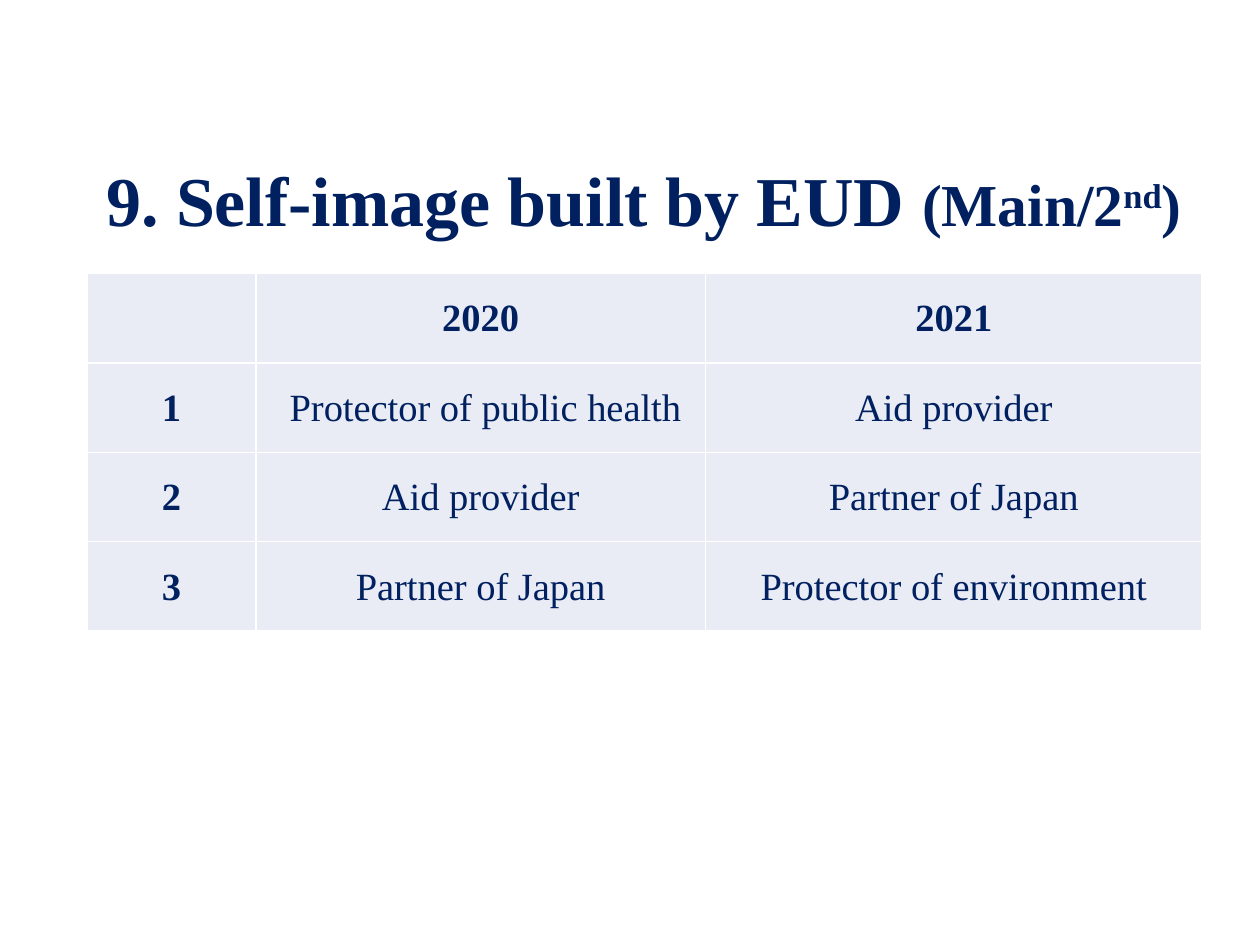
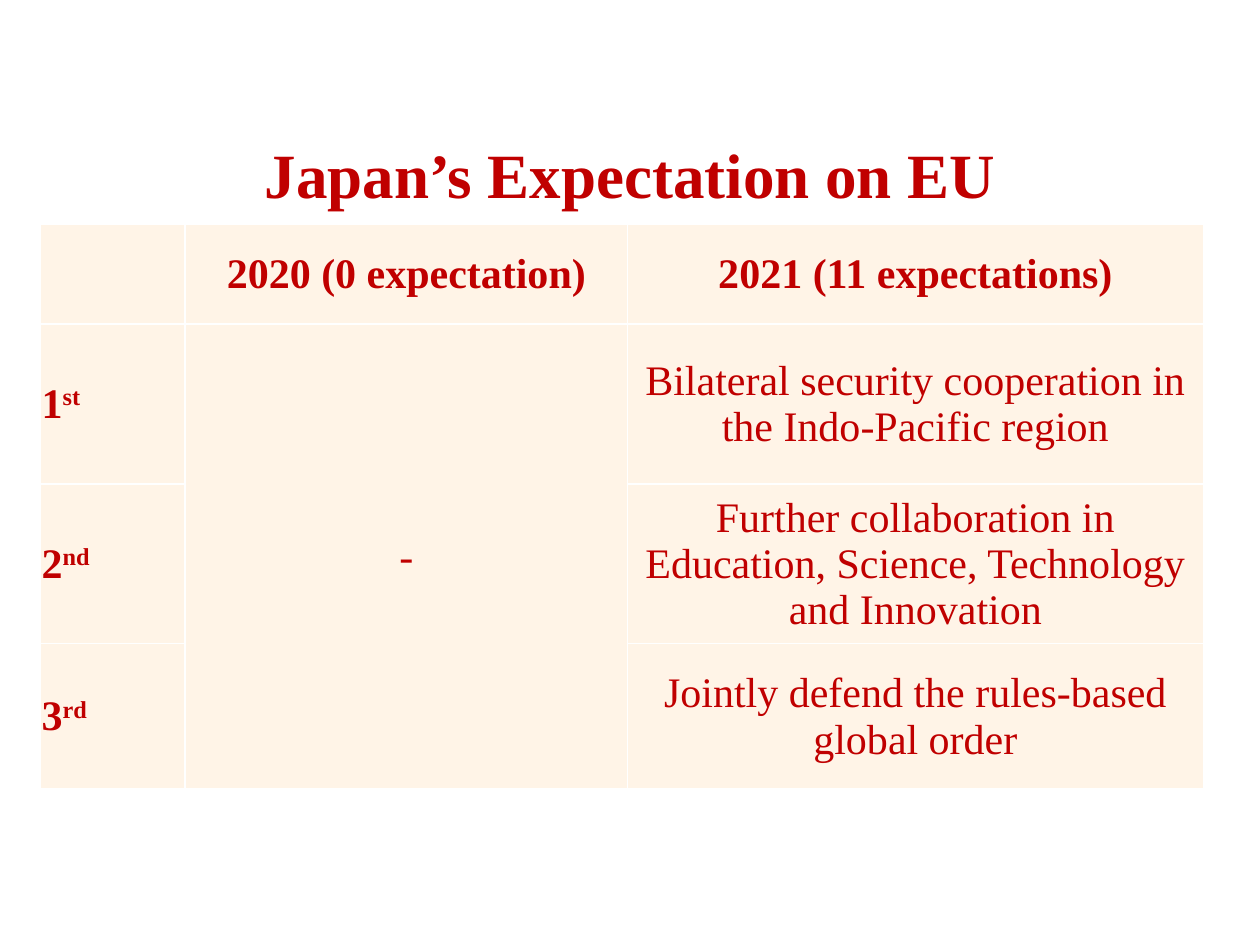
import lxml.etree
import pptx
import pptx.dml.color
import pptx.enum.text
import pptx.oxml.ns
import pptx.util

Inches = pptx.util.Inches
Pt = pptx.util.Pt
ALIGN = pptx.enum.text.PP_ALIGN
MIDDLE = pptx.enum.text.MSO_ANCHOR.MIDDLE
FONT = "Times New Roman"
NAVY, PALE_BLUE = "002060", "E9EBF5"
RED, CREAM = "C00000", "FFF4E7"
WHITE = "FFFFFF"


def rgb(value):
    """Turn a hex string into a colour."""
    return pptx.dml.color.RGBColor.from_string(value)


def add_run(p, text, size, color, bold=True, raised=False):
    """Add one formatted run, raised for an ordinal ending."""
    r = p.add_run()
    r.text = text
    r.font.name = FONT
    r.font.size = Pt(size)
    r.font.bold = bold
    r.font.color.rgb = rgb(color)
    if raised:
        r.font._element.set("baseline", "30000")


def add_title(slide, box, color, runs):
    """Place the title and fill it with (text, size, raised) runs."""
    sp = slide.shapes.title
    sp.left, sp.top, sp.width, sp.height = map(Inches, box)
    tf = sp.text_frame
    tf.word_wrap = True
    tf.auto_size = pptx.enum.text.MSO_AUTO_SIZE.NONE
    tf.vertical_anchor = MIDDLE
    p = tf.paragraphs[0]
    p.alignment = ALIGN.CENTER
    p.line_spacing = 0.9
    for text, size, raised in runs:
        add_run(p, text, size, color, raised=raised)


def style_cell(cell, fill):
    """Give a cell white borders, a fill and thin margins."""
    tc_pr = cell._tc.get_or_add_tcPr()
    for side in ("a:lnL", "a:lnR", "a:lnT", "a:lnB"):
        ln = lxml.etree.SubElement(tc_pr, pptx.oxml.ns.qn(side), w=str(Pt(1)))
        solid = lxml.etree.SubElement(ln, pptx.oxml.ns.qn("a:solidFill"))
        lxml.etree.SubElement(solid, pptx.oxml.ns.qn("a:srgbClr"), val=WHITE)
    cell.fill.solid()
    cell.fill.fore_color.rgb = rgb(fill)
    cell.vertical_anchor = MIDDLE
    cell.margin_left = cell.margin_right = cell.margin_top = Inches(0.01)
    cell.margin_bottom = 0


def add_ranking(slide, left, top, widths, heights, rows, size, color, fill):
    """Draw a ranking table; a (number, ending) label is set flush left."""
    table = slide.shapes.add_table(
        len(rows), len(widths), Inches(left), Inches(top),
        Inches(sum(widths)), Inches(sum(heights))).table
    table.first_row = table.horz_banding = False
    for column, width in zip(table.columns, widths):
        column.width = Inches(width)
    for i, (height, row) in enumerate(zip(heights, rows)):
        table.rows[i].height = Inches(height)
        for j, content in enumerate(row):
            cell = table.cell(i, j)
            style_cell(cell, fill)
            p = cell.text_frame.paragraphs[0]
            if isinstance(content, tuple):
                number, ending = content
                p.alignment = ALIGN.LEFT
                add_run(p, number, size, color)
                add_run(p, ending, size, color, raised=True)
            elif content:
                p.alignment = ALIGN.CENTER
                add_run(p, content, size, color, bold=i == 0 or j == 0)
    return table


def add_self_image_slide(prs):
    """Build the slide on the self-image built by EUD."""
    slide = prs.slides.add_slide(prs.slide_layouts[5])
    add_title(slide, (0.43, 1.06, 9.36, 1.11), NAVY, [
        ("9. Self-image built by EUD ", 40, False),
        ("(Main/2", 34, False), ("nd", 34, True), (")", 34, False)])
    rows = [
        ("", "2020", "2021"),
        ("1", " Protector of public health", "Aid provider"),
        ("2", "Aid provider", "Partner of Japan"),
        ("3", "Partner of Japan", "Protector of environment")]
    add_ranking(slide, 0.69, 2.17, (1.34, 3.57, 3.94), [0.71] * len(rows),
                rows, 22, NAVY, PALE_BLUE)


def add_expectation_slide(prs):
    """Build the slide on Japan's expectation on the EU."""
    slide = prs.slides.add_slide(prs.slide_layouts[5])
    add_title(slide, (0.32, 0.94, 9.36, 0.95), RED,
              [("Japan’s Expectation on EU", 36, False)])
    rows = [
        ("", "2020 (0 expectation)", "2021 (11 expectations)"),
        (("1", "st"), "-",
         "Bilateral security cooperation in the Indo-Pacific region"),
        (("2", "nd"), "",
         "Further collaboration in Education, Science, Technology and Innovation"),
        (("3", "rd"), "", "Jointly defend the rules-based global order")]
    table = add_ranking(slide, 0.32, 1.78, (1.15, 3.51, 4.57),
                        (0.79, 1.27, 1.27, 1.15), rows, 24, RED, CREAM)
    table.cell(1, 1).merge(table.cell(3, 1))


def main():
    """Build and save the presentation."""
    prs = pptx.Presentation()
    prs.slide_width, prs.slide_height = Inches(10), Inches(7.5)
    add_self_image_slide(prs)
    add_expectation_slide(prs)
    prs.save("out.pptx")


if __name__ == "__main__":
    main()
